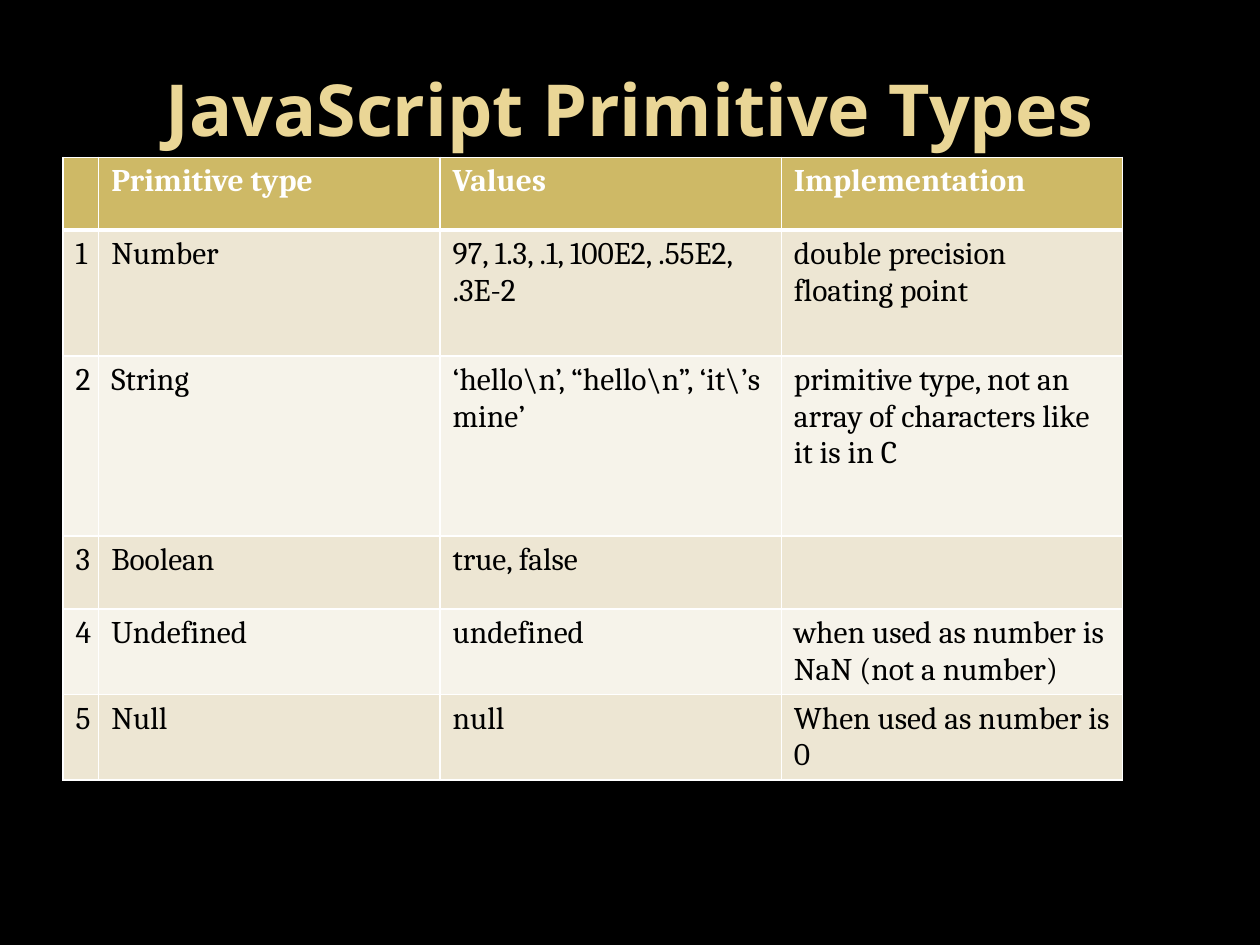
from dataclasses import dataclass

from lxml import etree
from pptx import Presentation
from pptx.dml.color import RGBColor
from pptx.enum.text import MSO_ANCHOR, MSO_AUTO_SIZE, PP_ALIGN
from pptx.oxml.ns import qn
from pptx.util import Cm, Pt

CENTER = PP_ALIGN.CENTER
MIDDLE = MSO_ANCHOR.MIDDLE
NO_AUTOFIT = MSO_AUTO_SIZE.NONE
TITLE_ONLY = 5


@dataclass(frozen=True)
class Theme:
    background: str = "000000"
    title: str = "EAD696"
    header_fill: str = "CEB966"
    header_text: str = "FFFFFF"
    body_text: str = "000000"
    band_fills: tuple = ("EDE6D3", "F6F3EA")
    border: str = "FFFFFF"
    title_font: str = "Open Sans"
    table_font: str = "Cambria"
    title_size: int = 41
    table_size: int = 18
    thin_line: int = 1
    thick_line: int = 3


THEME = Theme()

HEADINGS = ("", "Primitive type", "Values", "Implementation")
TYPES = (
    ("Number", "97, 1.3, .1, 100E2, .55E2, .3E-2", "double precision floating point"),
    ("String", "‘hello\\n’, “hello\\n”, ‘it\\’s mine’",
     "primitive type, not an array of characters like it is in C"),
    ("Boolean", "true, false", ""),
    ("Undefined", "undefined", "when used as number is NaN (not a number)"),
    ("Null", "null", "When used as number is 0"),
)
COLUMN_WIDTHS = (0.72, 6.88, 6.88, 6.88)
ROW_HEIGHTS = (1.47, 2.54, 3.63, 1.47, 1.47, 1.47)


def paint(fill, color):
    fill.solid()
    fill.fore_color.rgb = RGBColor.from_string(color)


def add_span(para, text, font, size, color, bold):
    span = para.add_run()
    span.text = text
    span.font.name = font
    span.font.size = Pt(size)
    span.font.bold = bold
    span.font.color.rgb = RGBColor.from_string(color)


def add_title(page, text):
    title = page.shapes.title
    title.left, title.top = Cm(1.27), Cm(0.76)
    title.width, title.height = Cm(22.86), Cm(2.84)
    frame = title.text_frame
    frame.auto_size = NO_AUTOFIT
    frame.word_wrap = True
    frame.vertical_anchor = MIDDLE
    para = frame.paragraphs[0]
    para.alignment = CENTER
    add_span(para, text, THEME.title_font, THEME.title_size, THEME.title, True)


def set_borders(cell, top, bottom):
    """Draw the four cell borders; call before filling, as the schema wants lines first."""
    properties = cell._tc.get_or_add_tcPr()
    widths = {"a:lnL": THEME.thin_line, "a:lnR": THEME.thin_line,
              "a:lnT": top, "a:lnB": bottom}
    for tag, width in widths.items():
        line = etree.SubElement(properties, qn(tag), w=str(Pt(width)))
        solid = etree.SubElement(line, qn("a:solidFill"))
        etree.SubElement(solid, qn("a:srgbClr"), val=THEME.border)


def fill_cell(cell, text, row):
    is_header = row == 0
    set_borders(cell,
                top=THEME.thick_line if row == 1 else THEME.thin_line,
                bottom=THEME.thick_line if is_header else THEME.thin_line)
    paint(cell.fill, THEME.header_fill if is_header else THEME.band_fills[(row - 1) % 2])
    if text:
        color = THEME.header_text if is_header else THEME.body_text
        add_span(cell.text_frame.paragraphs[0], text, THEME.table_font,
                 THEME.table_size, color, is_header)


def add_type_table(page):
    rows = [HEADINGS] + [(str(number), *entry) for number, entry in enumerate(TYPES, 1)]
    table = page.shapes.add_table(
        len(rows), len(HEADINGS), Cm(1.27), Cm(3.17),
        Cm(sum(COLUMN_WIDTHS)), Cm(sum(ROW_HEIGHTS))).table
    for column, width in zip(table.columns, COLUMN_WIDTHS):
        column.width = Cm(width)
    for row, height in zip(table.rows, ROW_HEIGHTS):
        row.height = Cm(height)
    for row, texts in enumerate(rows):
        for column, text in enumerate(texts):
            fill_cell(table.cell(row, column), text, row)


def main():
    deck = Presentation()
    deck.slide_width, deck.slide_height = Cm(25.4), Cm(19.05)
    page = deck.slides.add_slide(deck.slide_layouts[TITLE_ONLY])
    paint(page.background.fill, THEME.background)
    add_title(page, "JavaScript Primitive Types")
    add_type_table(page)
    deck.save("out.pptx")


if __name__ == "__main__":
    main()
